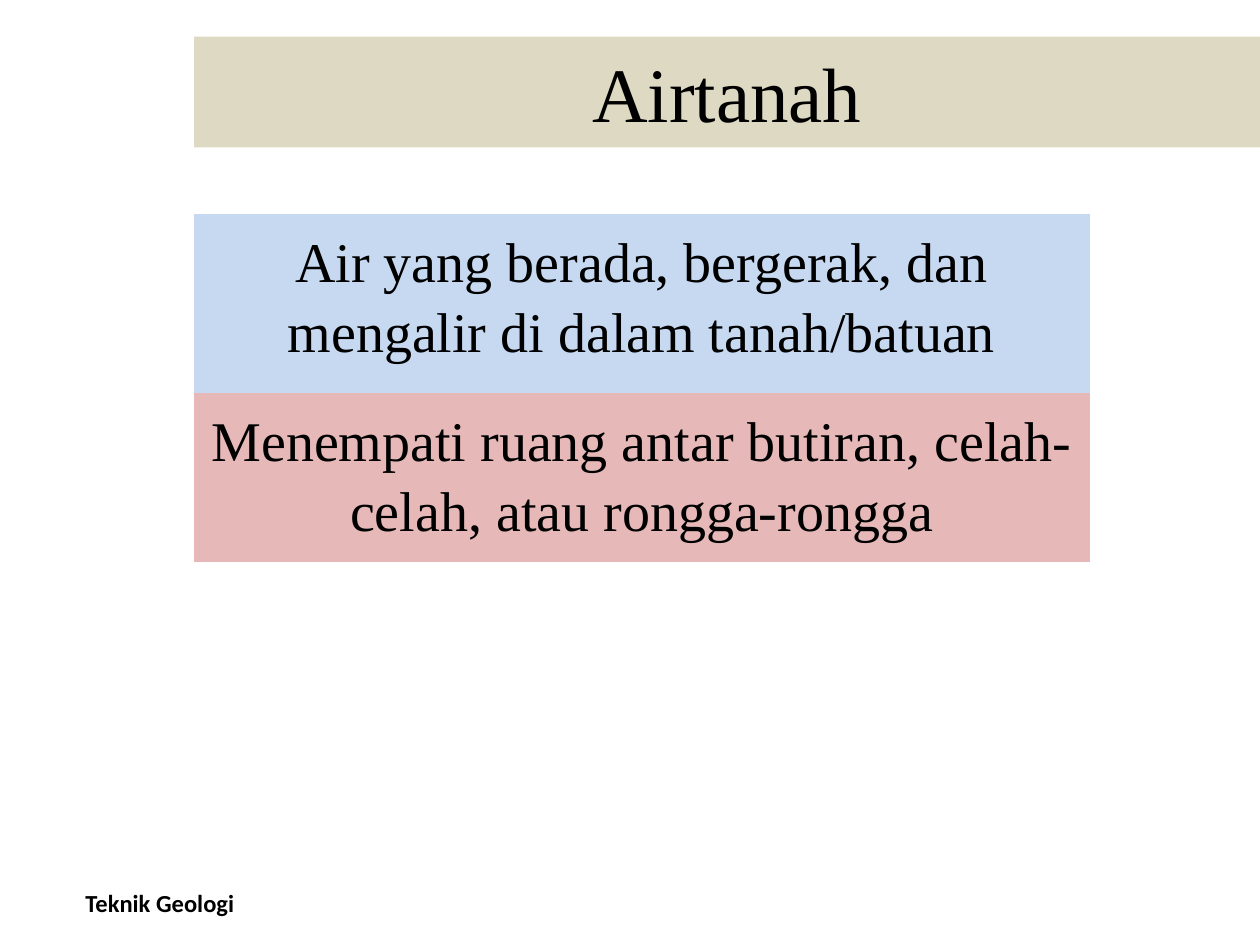
from pptx import Presentation, util as u
from pptx.dml.color import RGBColor
from pptx.enum import shapes, text

THEME = {
    "ink": "000000", "title_fill": "DDD9C3",
    "title_size": 44, "body_size": 32, "footer_size": 14,
    "serif": "Times New Roman", "sans": "Calibri",
}
WIDTH, HEIGHT = 10, 7.5
LEFT, BODY_WIDTH, BODY_TOP = 1.54, 7.11, 1.7

title = "Airtanah"
statements = [
    ("Air yang berada, bergerak, dan mengalir di dalam tanah/batuan", "C6D9F1", 1.42),
    ("Menempati ruang antar butiran, celah-celah, atau rongga-rongga", "E6B9B8", 1.34),
]
footer = "Teknik Geologi"


def write(holder, words, size, face, align, bold=False, anchor=text.MSO_ANCHOR.TOP):
    frame = holder.text_frame
    frame.word_wrap = True
    frame.vertical_anchor = anchor
    line = frame.paragraphs[0]
    line.text = words
    line.alignment = align
    line.font.size = u.Pt(size)
    line.font.name = face
    line.font.bold = bold
    line.font.color.rgb = RGBColor.from_string(THEME["ink"])
    return frame


def add_band(slide, top, width, height, fill):
    band = slide.shapes.add_shape(
        shapes.MSO_SHAPE.RECTANGLE, *map(u.Inches, (LEFT, top, width, height)))
    band.shadow.inherit = False
    band.fill.solid()
    band.fill.fore_color.rgb = RGBColor.from_string(fill)
    band.line.fill.background()
    return band


def main():
    deck = Presentation()
    deck.slide_width, deck.slide_height = u.Inches(WIDTH), u.Inches(HEIGHT)
    slide = deck.slides.add_slide(deck.slide_layouts[6])

    heading = add_band(slide, 0.29, WIDTH - LEFT, 0.88, THEME["title_fill"])
    write(heading, title, THEME["title_size"], THEME["serif"],
          text.PP_ALIGN.CENTER, anchor=text.MSO_ANCHOR.MIDDLE)

    top = BODY_TOP
    for words, fill, height in statements:
        statement = add_band(slide, top, BODY_WIDTH, height, fill)
        frame = write(statement, words, THEME["body_size"], THEME["serif"],
                      text.PP_ALIGN.CENTER)
        frame.margin_top = u.Inches(0.08)
        frame.paragraphs[0].line_spacing = 1.04
        top += height

    department = slide.shapes.add_textbox(*map(u.Inches, (0.58, 7, 1.53, 0.33)))
    write(department, footer, THEME["footer_size"], THEME["sans"],
          text.PP_ALIGN.LEFT, bold=True)

    deck.save("out.pptx")


if __name__ == "__main__":
    main()
